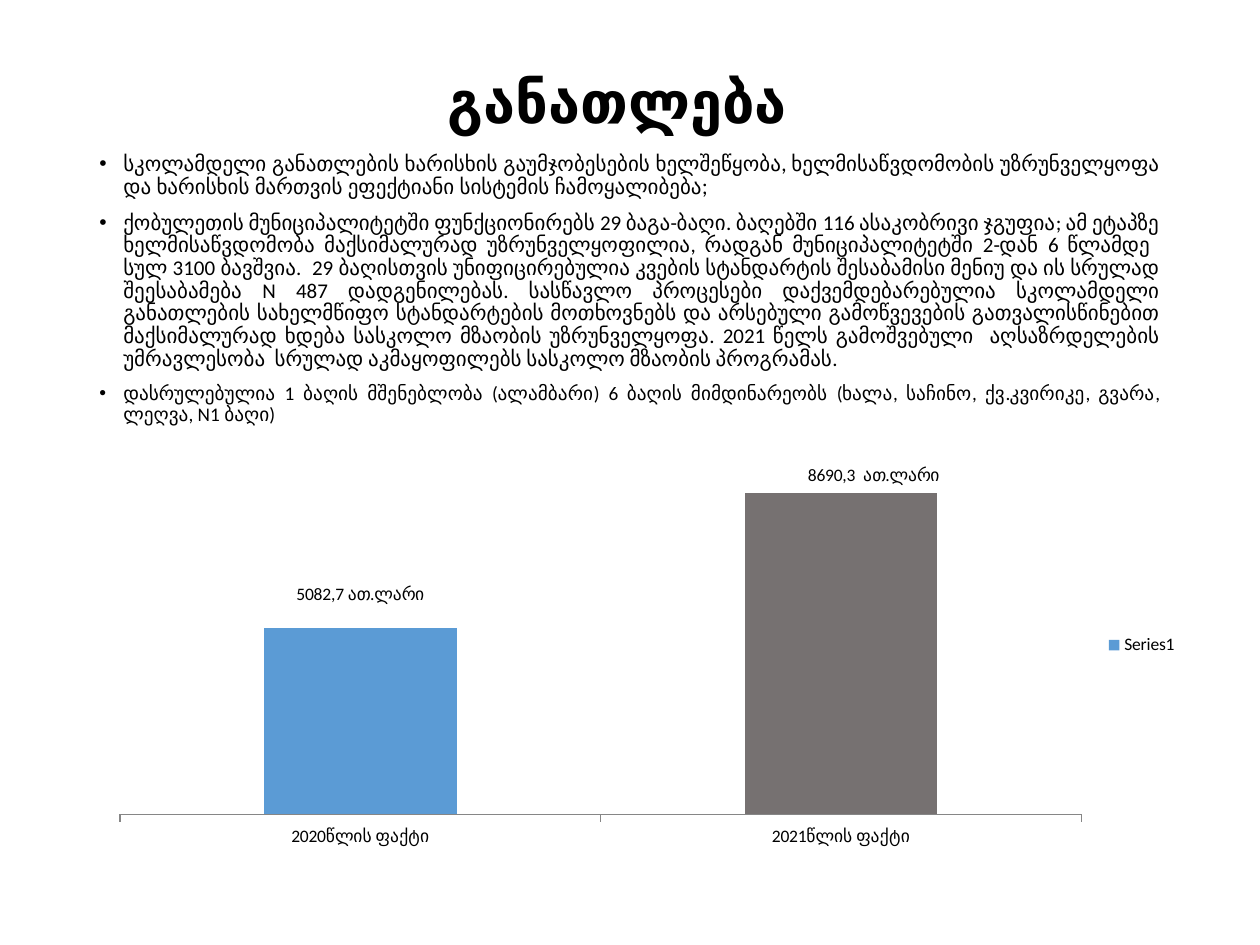
from dataclasses import dataclass

import pptx
import pptx.chart.data
import pptx.dml.color
import pptx.enum.chart
import pptx.enum.text
import pptx.oxml
import pptx.oxml.ns
import pptx.util
from pptx.util import Inches, Pt

BLACK = "000000"


@dataclass
class Bullet:
    text: str
    size: float
    font: str = "Calibri"


@dataclass
class Bar:
    category: str
    value: float
    color: str
    label: str
    shift: tuple[float, float]  # label offset as a share of the chart


BULLETS = [
    Bullet("სკოლამდელი განათლების ხარისხის გაუმჯობესების ხელშეწყობა, ხელმისაწვდომობის "
           "უზრუნველყოფა და ხარისხის მართვის ეფექტიანი სისტემის ჩამოყალიბება;", 12, "Lato"),
    Bullet("ქობულეთის მუნიციპალიტეტში ფუნქციონირებს 29 ბაგა-ბაღი. ბაღებში 116 ასაკობრივი "
           "ჯგუფია; ამ ეტაპზე ხელმისაწვდომობა მაქსიმალურად უზრუნველყოფილია, რადგან "
           "მუნიციპალიტეტში 2-დან 6 წლამდე  სულ 3100 ბავშვია.  29 ბაღისთვის უნიფიცირებულია "
           "კვების სტანდარტის შესაბამისი მენიუ და ის სრულად შეესაბამება N 487 დადგენილებას. "
           "სასწავლო პროცესები დაქვემდებარებულია სკოლამდელი განათლების სახელმწიფო "
           "სტანდარტების მოთხოვნებს და არსებული გამოწვევების გათვალისწინებით მაქსიმალურად "
           "ხდება სასკოლო მზაობის უზრუნველყოფა. 2021 წელს გამოშვებული  აღსაზრდელების "
           "უმრავლესობა  სრულად აკმაყოფილებს სასკოლო მზაობის პროგრამას.", 12),
    Bullet("დასრულებულია 1 ბაღის მშენებლობა (ალამბარი) 6 ბაღის მიმდინარეობს (ხალა, საჩინო, "
           "ქვ.კვირიკე, გვარა, ლეღვა, N1 ბაღი)", 11),
]
BARS = [
    Bar("2020წლის ფაქტი", 58, "5B9BD5", "5082,7 ათ.ლარი", (0, -0.3)),
    Bar("2021წლის ფაქტი", 100, "767171", "8690,3  ათ.ლარი", (0.03, -0.42)),
]


def rgb(color: str) -> pptx.dml.color.RGBColor:
    return pptx.dml.color.RGBColor.from_string(color)


def style_font(font, size: float, name: str = "Calibri", bold: bool = False) -> None:
    font.size, font.name, font.bold = Pt(size), name, bold
    font.color.rgb = rgb(BLACK)


def add_frame(page, left: float, top: float, width: float, height: float):
    box = page.shapes.add_textbox(Inches(left), Inches(top), Inches(width), Inches(height))
    box.text_frame.word_wrap = True
    return box.text_frame


def add_bullet(para, bullet: Bullet) -> None:
    para.alignment = pptx.enum.text.PP_ALIGN.JUSTIFY
    para.line_spacing = 0.9
    para.space_before = Pt(7.5)
    properties = para._p.get_or_add_pPr()
    properties.set("marL", str(Inches(0.19)))
    properties.set("indent", str(Inches(-0.19)))
    for tag, key, value in (("a:buFont", "typeface", "Arial"), ("a:buChar", "char", "•")):
        mark = pptx.oxml.parse_xml(f'<{tag} {pptx.oxml.ns.nsdecls("a")} {key}="{value}"/>')
        properties.append(mark)
    span = para.add_run()
    span.text = bullet.text
    style_font(span.font, bullet.size, bullet.font)


def make_layout(values: dict[str, float], modes: dict[str, str]):
    """Build a manual chart layout from shares of the chart's size."""
    items = {**modes, **values}
    inner = "".join(f'<c:{tag} val="{value}"/>' for tag, value in items.items())
    return pptx.oxml.parse_xml(
        f'<c:layout {pptx.oxml.ns.nsdecls("c")}><c:manualLayout>{inner}</c:manualLayout></c:layout>')


def style_bar(series, index: int, bar: Bar) -> None:
    point = series.points[index]
    point.format.fill.solid()
    point.format.fill.fore_color.rgb = rgb(bar.color)
    label = point.data_label
    span = label.text_frame.paragraphs[0].add_run()
    span.text = bar.label
    style_font(span.font, 10)
    x, y = bar.shift
    label._dLbl.insert(1, make_layout({"x": x, "y": y}, {}))


def hide_leader_lines(series) -> None:
    for switch in series._element.iter(pptx.oxml.ns.qn("c:showLeaderLines")):
        switch.set("val", "0")


def add_spending_chart(page) -> None:
    data = pptx.chart.data.CategoryChartData()
    data.categories = [bar.category for bar in BARS]
    data.add_series("Series1", [bar.value for bar in BARS])
    chart = page.shapes.add_chart(
        pptx.enum.chart.XL_CHART_TYPE.COLUMN_STACKED,
        Inches(0.78), Inches(3.44), Inches(8.67), Inches(3.36), data).chart
    style_font(chart.font, 10)
    chart.has_title = False
    chart.has_legend = True
    chart.legend.position = pptx.enum.chart.XL_LEGEND_POSITION.RIGHT
    chart.legend.include_in_layout = False

    # Axes
    chart.value_axis.visible = False
    chart.value_axis.has_major_gridlines = False
    chart.value_axis.minimum_scale = 0
    chart.value_axis.maximum_scale = 100
    axis = chart.category_axis
    axis.major_tick_mark = pptx.enum.chart.XL_TICK_MARK.OUTSIDE
    axis.format.line.color.rgb = rgb("868686")
    axis.format.line.width = Pt(0.75)

    # Columns and their labels
    plot = chart.plots[0]
    plot.gap_width, plot.overlap, plot.vary_by_categories = 150, 100, False
    series = plot.series[0]
    series.format.fill.solid()
    series.format.fill.fore_color.rgb = rgb(BARS[0].color)
    for index, bar in enumerate(BARS):
        style_bar(series, index, bar)
    hide_leader_lines(series)

    # Plot area
    area = chart._chartSpace.chart.plotArea
    for old in area.findall(pptx.oxml.ns.qn("c:layout")):
        area.remove(old)
    area.insert(0, make_layout({"x": 0.02, "y": 0.14, "w": 0.88, "h": 0.76},
                               {"layoutTarget": "inner", "xMode": "edge", "yMode": "edge"}))


def main() -> None:
    deck = pptx.Presentation()
    deck.slide_width, deck.slide_height = Inches(10), Inches(7.5)
    page = deck.slides.add_slide(deck.slide_layouts[6])

    # Title
    frame = add_frame(page, 0.59, 0.52, 8.62, 0.63)
    frame.vertical_anchor = pptx.enum.text.MSO_ANCHOR.MIDDLE
    para = frame.paragraphs[0]
    para.alignment = pptx.enum.text.PP_ALIGN.CENTER
    para.line_spacing = 0.9
    span = para.add_run()
    span.text = "განათლება"
    style_font(span.font, 33, bold=True)

    # Bulleted text
    frame = add_frame(page, 0.69, 1.17, 8.62, 5.63)
    for index, bullet in enumerate(BULLETS):
        add_bullet(frame.add_paragraph() if index else frame.paragraphs[0], bullet)

    add_spending_chart(page)
    deck.save("out.pptx")


if __name__ == "__main__":
    main()
